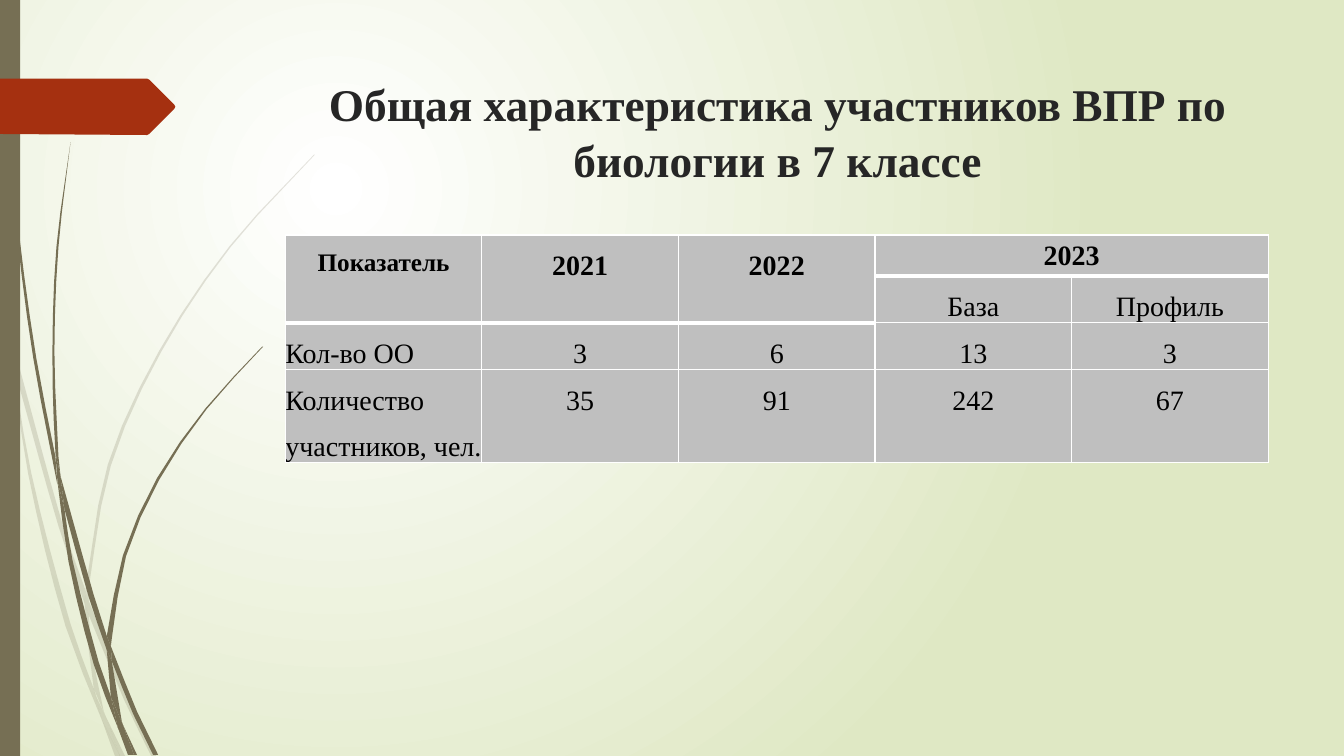
import dataclasses
import math
import typing

import lxml.etree
import pptx
import pptx.dml.color
import pptx.enum.shapes
import pptx.enum.text
import pptx.oxml
import pptx.oxml.ns
import pptx.util

Cm = pptx.util.Cm
Point = tuple[float, float]

COLORS = {
    "glow": "FFFFFF",
    "meadow": "DFE8C4",
    "stem": "766F54",
    "marker": "A53010",
    "title": "262626",
    "text": "000000",
    "cell": "BFBFBF",
    "border": "FFFFFF",
}
FONT = "Times New Roman"
GRID_CM = 0.0254  # one unit of the outline coordinates
SAMPLE_LENGTH = 50
COLUMN_COUNT = 5
SPLIT_COLUMN = 3


@dataclasses.dataclass(frozen=True)
class Blade:
    """A sliver of grass: one edge going out, the other coming back."""
    outward: list[Point]
    back: list[Point]


@dataclasses.dataclass(frozen=True)
class Entry:
    row: int
    column: int
    text: str
    size: int = 20
    bold: bool = False
    row_span: int = 1
    column_span: int = 1


FADED_BLADES = [
    Blade([(0, 299), (10, 344), (11, 350)], [(9, 322), (0, 282)]),
    Blade([(17, 376), (58, 522), (84, 599)], [(85, 586), (62, 520), (14, 345)]),
    Blade([(88, 610), (123, 694), (150, 750)], [(155, 750), (127, 692), (88, 596)]),
    Blade([(105, 711), (119, 750)], [(124, 750)]),
    Blade([(11, 350), (28, 470), (65, 621), (101, 714)],
          [(93, 683), (70, 619), (31, 469), (11, 350)]),
    Blade([(84, 599), (93, 683), (105, 711)], [(103, 706), (91, 646), (88, 610)]),
    Blade([(88, 596), (88, 584), (110, 462), (160, 349), (229, 245), (312, 154)],
          [(312, 153), (228, 244), (158, 348), (107, 461), (85, 584)]),
    Blade([(101, 714), (114, 750)], [(119, 750)]),
    Blade([(84, 599), (88, 610)], [(88, 596), (85, 586)]),
    Blade([(93, 683), (101, 714), (119, 750)], [(105, 711), (96, 692)]),
]
SOLID_BLADES = [
    Blade([(3, 0), (7, 110), (17, 233), (33, 355), (57, 481)],
          [(55, 453), (36, 355), (19, 232), (8, 109), (4, 0)]),
    Blade([(64, 505), (88, 592), (106, 645)], [(106, 631), (93, 590), (60, 472)]),
    Blade([(111, 656), (132, 708), (152, 749)], [(157, 749), (136, 706), (110, 641)]),
    Blade([(57, 477), (68, 557), (93, 659), (117, 722)],
          [(110, 691), (98, 657), (72, 556), (64, 505)]),
    Blade([(70, 141), (56, 245), (52, 349), (55, 449), (60, 472)],
          [(58, 453), (54, 349), (58, 245), (70, 141)]),
    Blade([(122, 719), (133, 749)], [(136, 749)]),
    Blade([(55, 449), (57, 477), (64, 505)], [(60, 472)]),
    Blade([(110, 641), (111, 633), (125, 552), (158, 476), (205, 406), (261, 344)],
          [(260, 344), (204, 405), (156, 474), (122, 551), (106, 631)]),
    Blade([(117, 722), (127, 749)], [(131, 749)]),
    Blade([(106, 645), (110, 691), (122, 719)], [(121, 716), (111, 656)]),
    Blade([(106, 645), (111, 656)], [(110, 641), (106, 631)]),
    Blade([(110, 691), (117, 722), (130, 749)], [(133, 749), (122, 719)]),
]
MARKER = [(0, 78), (146, 78), (148, 79), (173, 104), (174, 106), (173, 108), (148, 133), (146, 134), (0, 133)]

HEADERS = [
    Entry(0, 0, "Показатель", size=18, bold=True, row_span=2),
    Entry(0, 1, "2021", bold=True, row_span=2),
    Entry(0, 2, "2022", bold=True, row_span=2),
    Entry(0, 3, "2023", bold=True, column_span=2),
    Entry(1, 3, "База"),
    Entry(1, 4, "Профиль"),
]
BODY = [
    ["Кол-во ОО", "3", "6", "13", "3"],
    ["Количество участников, чел.", "35", "91", "242", "67"],
]


def rgb(name: str) -> pptx.dml.color.RGBColor:
    return pptx.dml.color.RGBColor.from_string(COLORS[name])


def paint_background(slide) -> None:
    fill = slide.background.fill
    fill.gradient()
    for stop, name in zip(fill.gradient_stops, ("glow", "meadow")):
        stop.color.rgb = rgb(name)
    linear = slide.element.find(".//" + pptx.oxml.ns.qn("a:lin"))
    linear.getparent().replace(linear, pptx.oxml.parse_xml(
        f'<a:path {pptx.oxml.ns.nsdecls("a")} path="circle">'
        '<a:fillToRect l="50000" t="50000" r="100000" b="100000"/></a:path>'))


def smooth(edge: list[Point]) -> list[Point]:
    """Sample a Hermite curve through the points, spaced by chord length."""
    def slope(index: int) -> Point:
        before, after = max(index - 1, 0), min(index + 1, len(edge) - 1)
        length = sum(math.dist(edge[i], edge[i + 1]) for i in range(before, after))
        return tuple((b - a) / length for a, b in zip(edge[before], edge[after]))

    points = [edge[0]]
    for index, (start, end) in enumerate(zip(edge, edge[1:])):
        chord = math.dist(start, end)
        leave, arrive = slope(index), slope(index + 1)
        steps = max(1, math.ceil(chord / SAMPLE_LENGTH))
        for step in range(1, steps + 1):
            t = step / steps
            weight = t * t * (3 - 2 * t)
            points.append(tuple(
                a + (b - a) * weight + chord * (u * t * (1 - t) ** 2 - v * t * t * (1 - t))
                for a, b, u, v in zip(start, end, leave, arrive)))
    return points


def paint(shape, color: str, opacity: int = 100) -> None:
    shape.shadow.inherit = False
    shape.line.fill.background()
    shape.fill.solid()
    shape.fill.fore_color.rgb = rgb(color)
    if opacity < 100:
        color_element = shape.element.spPr.find(".//" + pptx.oxml.ns.qn("a:srgbClr"))
        lxml.etree.SubElement(color_element, pptx.oxml.ns.qn("a:alpha"), val=str(opacity * 1000))


def draw_outline(slide, points: list[Point], color: str, opacity: int = 100) -> None:
    corners = [(Cm(x * GRID_CM), Cm(y * GRID_CM)) for x, y in points]
    builder = slide.shapes.build_freeform(*corners[0])
    builder.add_line_segments(corners[1:], close=True)
    paint(builder.convert_to_shape(), color, opacity)


def draw_decoration(slide) -> None:
    for blades, opacity in ((FADED_BLADES, 20), (SOLID_BLADES, 100)):
        for blade in blades:
            draw_outline(slide, smooth(blade.outward) + smooth(blade.back), "stem", opacity)
    side_bar = slide.shapes.add_shape(
        pptx.enum.shapes.MSO_SHAPE.RECTANGLE, 0, 0, Cm(0.51), Cm(19.05))
    paint(side_bar, "stem")
    draw_outline(slide, MARKER, "marker")


def format_paragraph(paragraph, size: float, bold: bool, color: str, spacing: float, centered: bool) -> None:
    alignment = pptx.enum.text.PP_ALIGN
    paragraph.alignment = alignment.CENTER if centered else alignment.LEFT
    paragraph.line_spacing = spacing
    paragraph.font.name = FONT
    paragraph.font.size = pptx.util.Pt(size)
    paragraph.font.bold = bold
    paragraph.font.color.rgb = rgb(color)


def write_title(slide) -> None:
    title = slide.shapes.title
    title.left, title.top, title.width, title.height = Cm(7.21), Cm(1.73), Cm(24.77), Cm(3.56)
    frame = title.text_frame
    frame.text = "Общая характеристика участников ВПР по биологии в 7 классе"
    frame.word_wrap = True
    frame.auto_size = pptx.enum.text.MSO_AUTO_SIZE.NONE
    frame.vertical_anchor = pptx.enum.text.MSO_ANCHOR.TOP
    format_paragraph(frame.paragraphs[0], 32.4, True, "title", 1.04, True)
    title.element.getparent().append(title.element)


def closes_header(row: int, column: int) -> bool:
    return row == 0 or (row == 1 and column < SPLIT_COLUMN)


def style_cell(cell, row: int, column: int) -> None:
    top = 3 if row > 0 and closes_header(row - 1, column) else 1
    bottom = 3 if closes_header(row, column) else 1
    properties = cell._tc.get_or_add_tcPr()
    for side, width in (("L", 1), ("R", 1), ("T", top), ("B", bottom)):
        properties.append(pptx.oxml.parse_xml(
            f'<a:ln{side} {pptx.oxml.ns.nsdecls("a")} w="{int(pptx.util.Pt(width))}"><a:solidFill>'
            f'<a:srgbClr val="{COLORS["border"]}"/></a:solidFill></a:ln{side}>'))
    cell.fill.solid()
    cell.fill.fore_color.rgb = rgb("cell")


def fill_table(slide, entries: typing.Iterable[Entry]) -> None:
    row_count = 2 + len(BODY)
    table = slide.shapes.add_table(
        row_count, COLUMN_COUNT, Cm(7.19), Cm(5.92), Cm(24.77), Cm(1.04 * row_count)).table
    for row in range(row_count):
        for column in range(COLUMN_COUNT):
            style_cell(table.cell(row, column), row, column)
    for entry in entries:
        cell = table.cell(entry.row, entry.column)
        if entry.row_span > 1 or entry.column_span > 1:
            cell.merge(table.cell(entry.row + entry.row_span - 1, entry.column + entry.column_span - 1))
        cell.text = entry.text
        spans_years = entry.column_span > 1
        if not spans_years:
            cell.margin_left = cell.margin_right = cell.margin_top = cell.margin_bottom = 0
        centered = entry.row < 2 or entry.column > 0
        format_paragraph(cell.text_frame.paragraphs[0], entry.size, entry.bold, "text",
                         1.0 if spans_years else 1.5, centered)


def main() -> None:
    presentation = pptx.Presentation()
    presentation.slide_width, presentation.slide_height = Cm(33.87), Cm(19.05)
    slide = presentation.slides.add_slide(presentation.slide_layouts[5])
    paint_background(slide)
    draw_decoration(slide)
    write_title(slide)
    body = [Entry(row, column, text) for row, texts in enumerate(BODY, 2) for column, text in enumerate(texts)]
    fill_table(slide, HEADERS + body)
    presentation.save("out.pptx")


if __name__ == "__main__":
    main()
